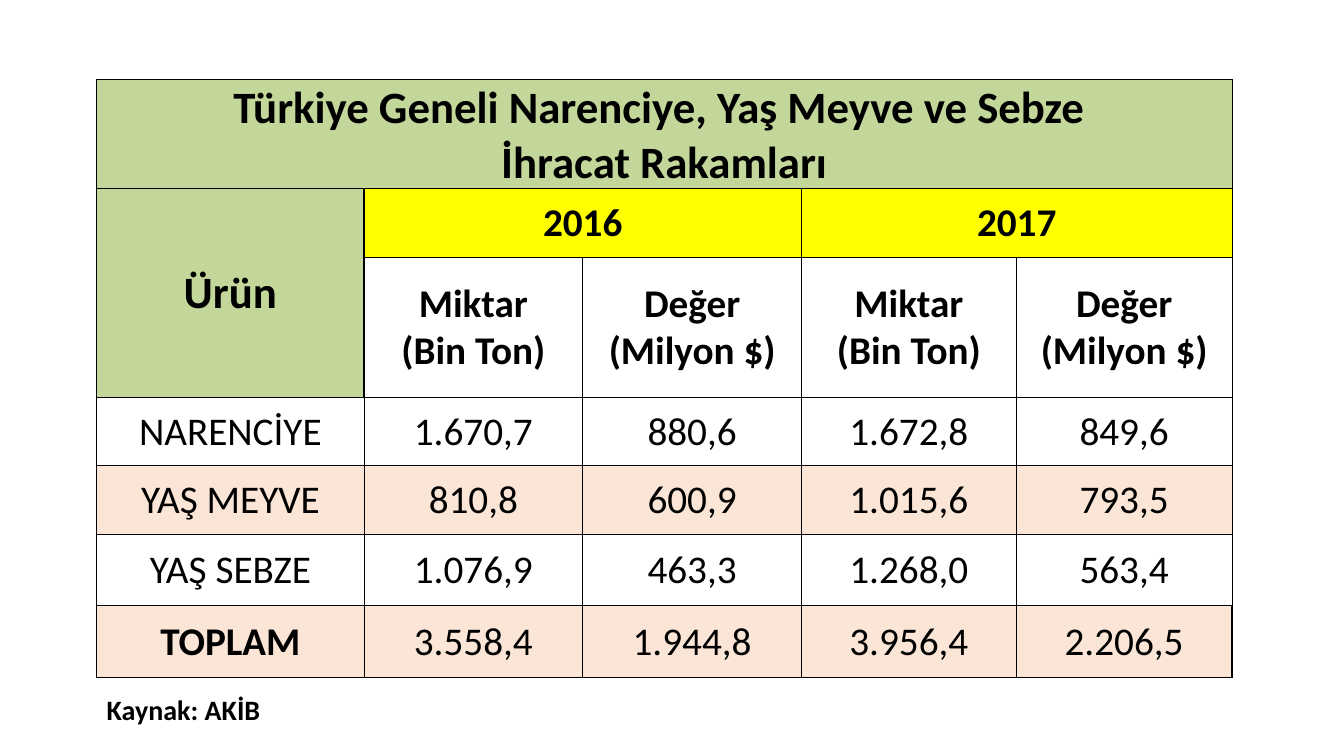
from lxml.etree import SubElement
from pptx import Presentation
from pptx.dml.color import RGBColor
from pptx.enum.text import MSO_ANCHOR, MSO_AUTO_SIZE, PP_ALIGN
from pptx.oxml.ns import qn
from pptx.util import Inches, Pt

GREEN, YELLOW, PEACH, BLACK = "C4D79B", "FFFF00", "FBE5D6", "000000"
COLUMN_WIDTHS = [2.65, 2.17, 2.17, 2.13, 2.14]
ROW_HEIGHTS = [1.08, 0.68, 1.39, 0.68, 0.68, 0.71, 0.71]
TITLE = ["Türkiye Geneli Narenciye, Yaş Meyve ve Sebze ", "İhracat Rakamları"]
MEASURES = ["Miktar\n(Bin Ton)", "Değer\n(Milyon $)"]
EXPORTS = [
    ["NARENCİYE", "1.670,7", "880,6", "1.672,8", "849,6"],
    ["YAŞ MEYVE", "810,8", "600,9", "1.015,6", "793,5"],
    ["YAŞ SEBZE", "1.076,9", "463,3", "1.268,0", "563,4"],
    ["TOPLAM", "3.558,4", "1.944,8", "3.956,4", "2.206,5"],
]
FIRST_DATA_ROW, TOTAL_ROW = 3, 6
# Thick lines as (grid line, row or column)
THICK_ACROSS = {(line, column) for line in (0, 1, 6, 7) for column in range(5)} | {(3, 0)}
THICK_DOWN = {(0, 0), (0, 1), (0, 2), (0, 6), (1, 1), (1, 2), (5, 0), (5, 6)}


def color(value):
    return RGBColor.from_string(value)


def write_text(frame, paragraphs, size=28, bold=False, align=PP_ALIGN.LEFT):
    for index, text in enumerate(paragraphs):
        paragraph = frame.add_paragraph() if index else frame.paragraphs[0]
        paragraph.text = text
        paragraph.alignment = align
        for run in paragraph.runs:
            run.font.name = "Calibri"
            run.font.size = Pt(size)
            run.font.bold = bold
            run.font.color.rgb = color(BLACK)


def fill_cell(cell, paragraphs, fill=None, **text_format):
    write_text(cell.text_frame, paragraphs, align=PP_ALIGN.CENTER, **text_format)
    cell.vertical_anchor = MSO_ANCHOR.MIDDLE
    cell.margin_left = cell.margin_right = cell.margin_top = Inches(0.01)
    cell.margin_bottom = 0
    if fill:
        cell.fill.solid()
        cell.fill.fore_color.rgb = color(fill)
    else:
        cell.fill.background()


def set_borders(cell, row, column):
    thick = {
        "a:lnL": (column, row) in THICK_DOWN,
        "a:lnR": (column + 1, row) in THICK_DOWN,
        "a:lnT": (row, column) in THICK_ACROSS,
        "a:lnB": (row + 1, column) in THICK_ACROSS,
    }
    properties = cell._tc.get_or_add_tcPr()
    for position, (tag, is_thick) in enumerate(thick.items()):
        line = SubElement(properties, qn(tag), w=str(Pt(1 if is_thick else 0.5)))
        SubElement(SubElement(line, qn("a:solidFill")), qn("a:srgbClr"), val=BLACK)
        properties.insert(position, line)


def add_export_table(slide):
    frame = slide.shapes.add_table(
        len(ROW_HEIGHTS), len(COLUMN_WIDTHS), Inches(0.96), Inches(0.79),
        Inches(sum(COLUMN_WIDTHS)), Inches(sum(ROW_HEIGHTS)))
    table = frame.table
    table.first_row = table.horz_banding = False
    for column, width in zip(table.columns, COLUMN_WIDTHS):
        column.width = Inches(width)
    for row, height in zip(table.rows, ROW_HEIGHTS):
        row.height = Inches(height)

    # Title and product heading
    table.cell(0, 0).merge(table.cell(0, 4))
    fill_cell(table.cell(0, 0), TITLE, GREEN, size=32, bold=True)
    table.cell(1, 0).merge(table.cell(2, 0))
    fill_cell(table.cell(1, 0), ["Ürün"], GREEN, size=32, bold=True)

    # Years, each over its two measures
    for column, year in ((1, "2016"), (3, "2017")):
        table.cell(1, column).merge(table.cell(1, column + 1))
        fill_cell(table.cell(1, column), [year], YELLOW, bold=True)
        for offset, measure in enumerate(MEASURES):
            fill_cell(table.cell(2, column + offset), [measure], bold=True)

    # Export figures, every second row tinted
    for row, values in enumerate(EXPORTS, FIRST_DATA_ROW):
        fill = None if (row - FIRST_DATA_ROW) % 2 == 0 else PEACH
        for column, value in enumerate(values):
            fill_cell(table.cell(row, column), [value], fill,
                      bold=row == TOTAL_ROW and column == 0)

    # Cell borders
    for row in range(len(ROW_HEIGHTS)):
        for column in range(len(COLUMN_WIDTHS)):
            set_borders(table.cell(row, column), row, column)


def add_source_note(slide):
    box = slide.shapes.add_textbox(Inches(0.96), Inches(6.82), Inches(6.49), Inches(0.44))
    box.text_frame.word_wrap = True
    box.text_frame.auto_size = MSO_AUTO_SIZE.SHAPE_TO_FIT_TEXT
    write_text(box.text_frame, ["Kaynak: AKİB"], size=20, bold=True)


def main():
    presentation = Presentation()
    presentation.slide_width = Inches(13.33)
    presentation.slide_height = Inches(7.5)
    slide = presentation.slides.add_slide(presentation.slide_layouts[6])
    add_source_note(slide)
    add_export_table(slide)
    presentation.save("out.pptx")


if __name__ == "__main__":
    main()
